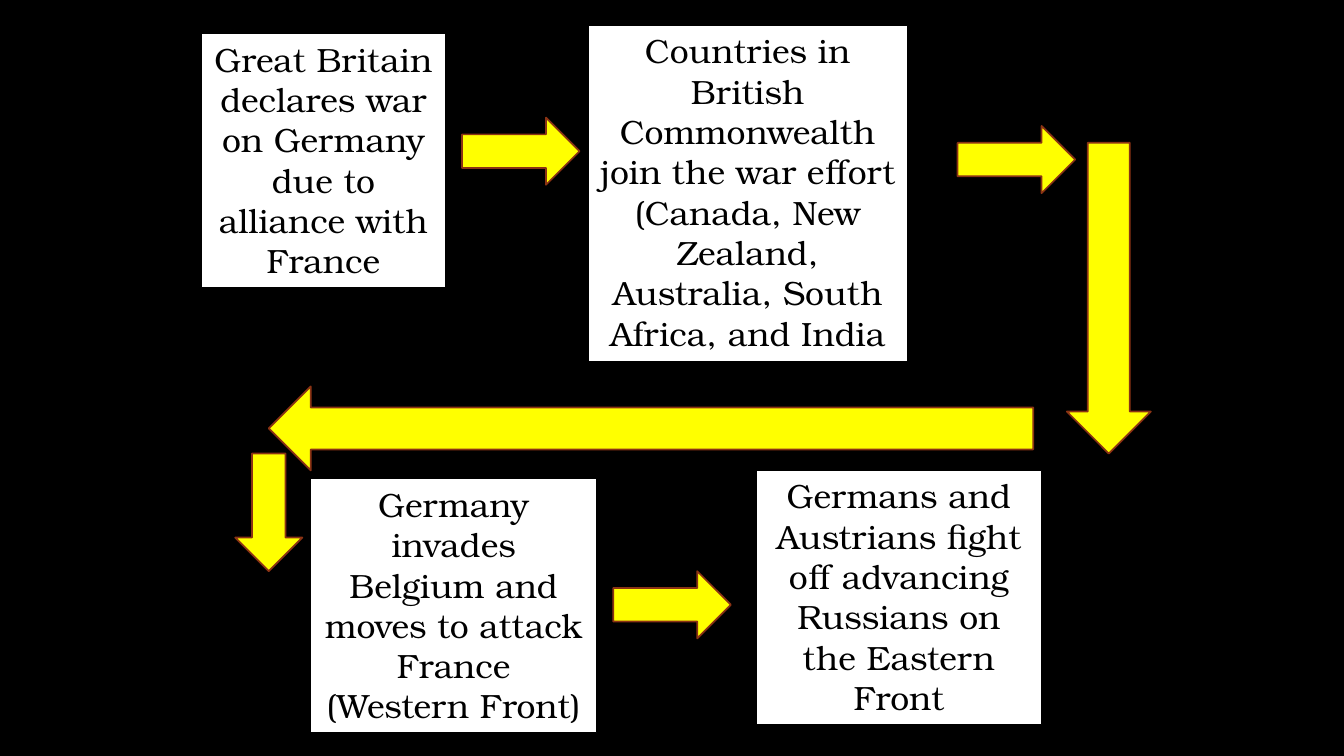
import dataclasses

import pptx
import pptx.dml.color
import pptx.enum.shapes
import pptx.enum.text
import pptx.util

PX = 9525  # EMU in one px, 96 px to the inch
PAGE_WIDTH, PAGE_HEIGHT = 1280, 720
BLANK_LAYOUT = 6
ARROW_LENGTH, ARROW_BREADTH = 112, 64
WIDE_BREADTH = 80
ARROWS = pptx.enum.shapes.MSO_SHAPE


@dataclasses.dataclass(frozen=True)
class Theme:
    background: str = "000000"
    paper: str = "FFFFFF"
    ink: str = "000000"
    arrow: str = "FFFF00"
    arrow_edge: str = "8B3314"
    font: str = "TeX Gyre Bonum"
    text_size: float = 24
    box_line: float = 0.75
    arrow_line: float = 1.25


THEME = Theme()


def rgb(code):
    return pptx.dml.color.RGBColor.from_string(code)


def to_emu(box):
    return [pptx.util.Emu(length * PX) for length in box]


def paint(shape, fill, line, width):
    shape.fill.solid()
    shape.fill.fore_color.rgb = rgb(fill)
    shape.line.color.rgb = rgb(line)
    shape.line.width = pptx.util.Pt(width)


def write(frame, text, *, font, size, color, align):
    para = frame.paragraphs[0]
    para.alignment = align
    span = para.add_run()
    span.text = text
    span.font.name = font
    span.font.size = pptx.util.Pt(size)
    span.font.color.rgb = rgb(color)


def add_event(page, box, text):
    event = page.shapes.add_textbox(*to_emu(box))
    paint(event, THEME.paper, THEME.ink, THEME.box_line)
    frame = event.text_frame
    frame.word_wrap = True
    frame.auto_size = pptx.enum.text.MSO_AUTO_SIZE.SHAPE_TO_FIT_TEXT
    write(frame, text, font=THEME.font, size=THEME.text_size,
          color=THEME.ink, align=pptx.enum.text.PP_ALIGN.CENTER)


def add_arrow(page, kind, box):
    arrow = page.shapes.add_shape(kind, *to_emu(box))
    arrow.shadow.inherit = False
    paint(arrow, THEME.arrow, THEME.arrow_edge, THEME.arrow_line)


def add_upper_row(page, box):
    """Britain and the Commonwealth, with arrows leading to the right edge."""
    left, top, width, height = box
    add_arrow(page, ARROWS.RIGHT_ARROW,
              (left + 248, top + 88, ARROW_LENGTH, ARROW_BREADTH))
    add_event(page, (left, top + 8, 232, 242),
              "Great Britain declares war on Germany due to alliance with France")
    add_arrow(page, ARROWS.RIGHT_ARROW,
              (left + width - ARROW_LENGTH, top + 96, ARROW_LENGTH, ARROW_BREADTH))
    add_event(page, (left + 368, top, 304, height),
              "Countries in British Commonwealth join the war effort "
              "(Canada, New Zealand, Australia, South Africa, and India")


def add_return_path(page, box):
    """Arrows down the right side, back across, and down on the left."""
    left, top, width, height = box
    add_arrow(page, ARROWS.DOWN_ARROW,
              (left + width - WIDE_BREADTH, top, WIDE_BREADTH, 296))
    add_arrow(page, ARROWS.LEFT_ARROW, (left + 32, top + 232, 728, WIDE_BREADTH))
    add_arrow(page, ARROWS.DOWN_ARROW,
              (left, top + height - ARROW_LENGTH, ARROW_BREADTH, ARROW_LENGTH))


def add_lower_row(page, box):
    """The Western and Eastern Fronts, joined by an arrow."""
    left, top, width, height = box
    event_width, event_height = 272, 242
    add_event(page, (left, top + height - event_height, event_width, event_height),
              "Germany invades Belgium and moves to attack France (Western Front)")
    add_arrow(page, ARROWS.RIGHT_ARROW,
              (left + 288, top + 96, ARROW_LENGTH, ARROW_BREADTH))
    add_event(page, (left + width - event_width, top, event_width, event_height),
              "Germans and Austrians fight off advancing Russians on the Eastern Front")


def main():
    deck = pptx.Presentation()
    deck.slide_width, deck.slide_height = to_emu((PAGE_WIDTH, PAGE_HEIGHT))
    page = deck.slides.add_slide(deck.slide_layouts[BLANK_LAYOUT])
    page.background.fill.solid()
    page.background.fill.fore_color.rgb = rgb(THEME.background)
    add_upper_row(page, (192, 24, 832, 320))
    add_return_path(page, (224, 136, 872, 408))
    add_lower_row(page, (296, 448, 696, 250))
    deck.save("out.pptx")


if __name__ == "__main__":
    main()
